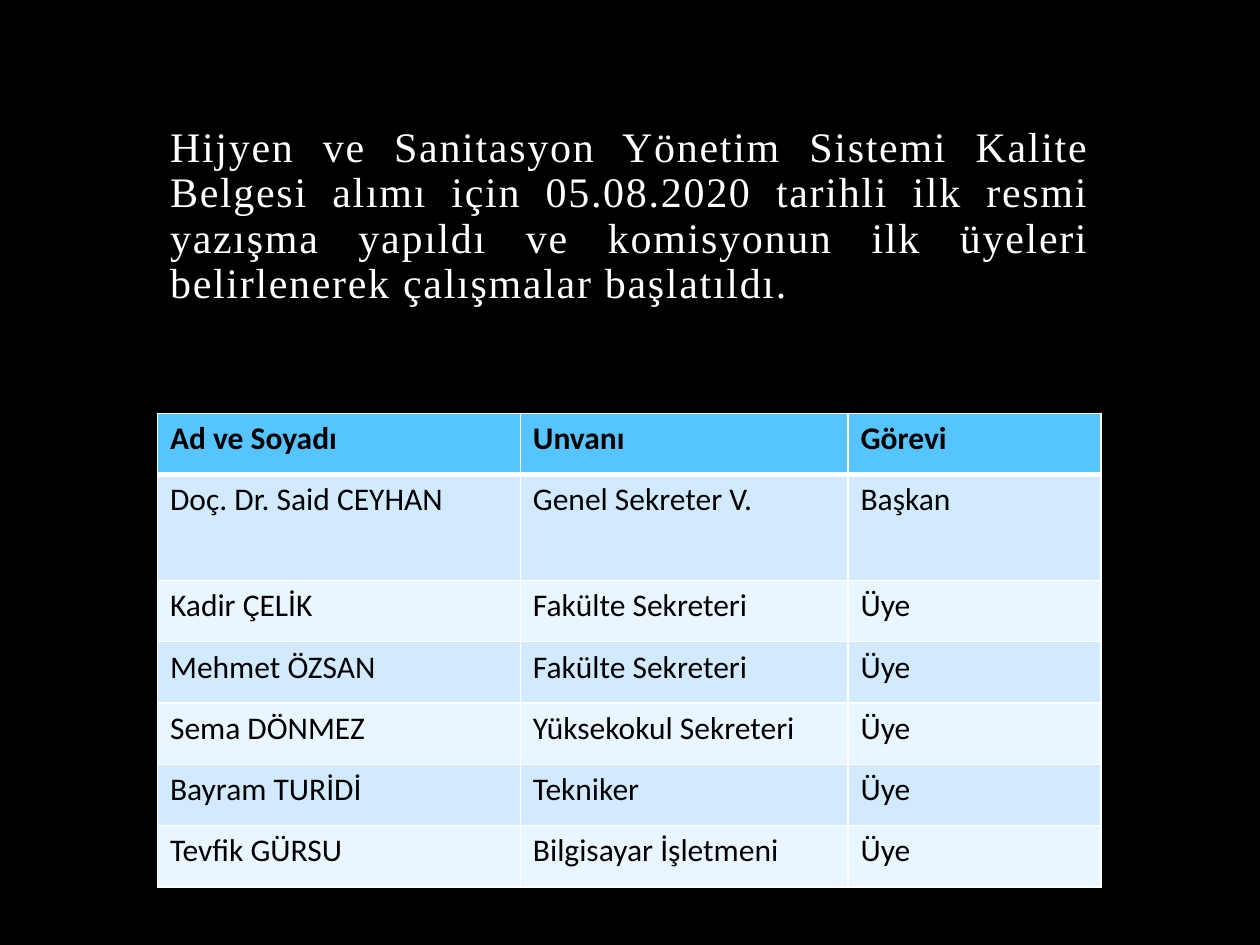
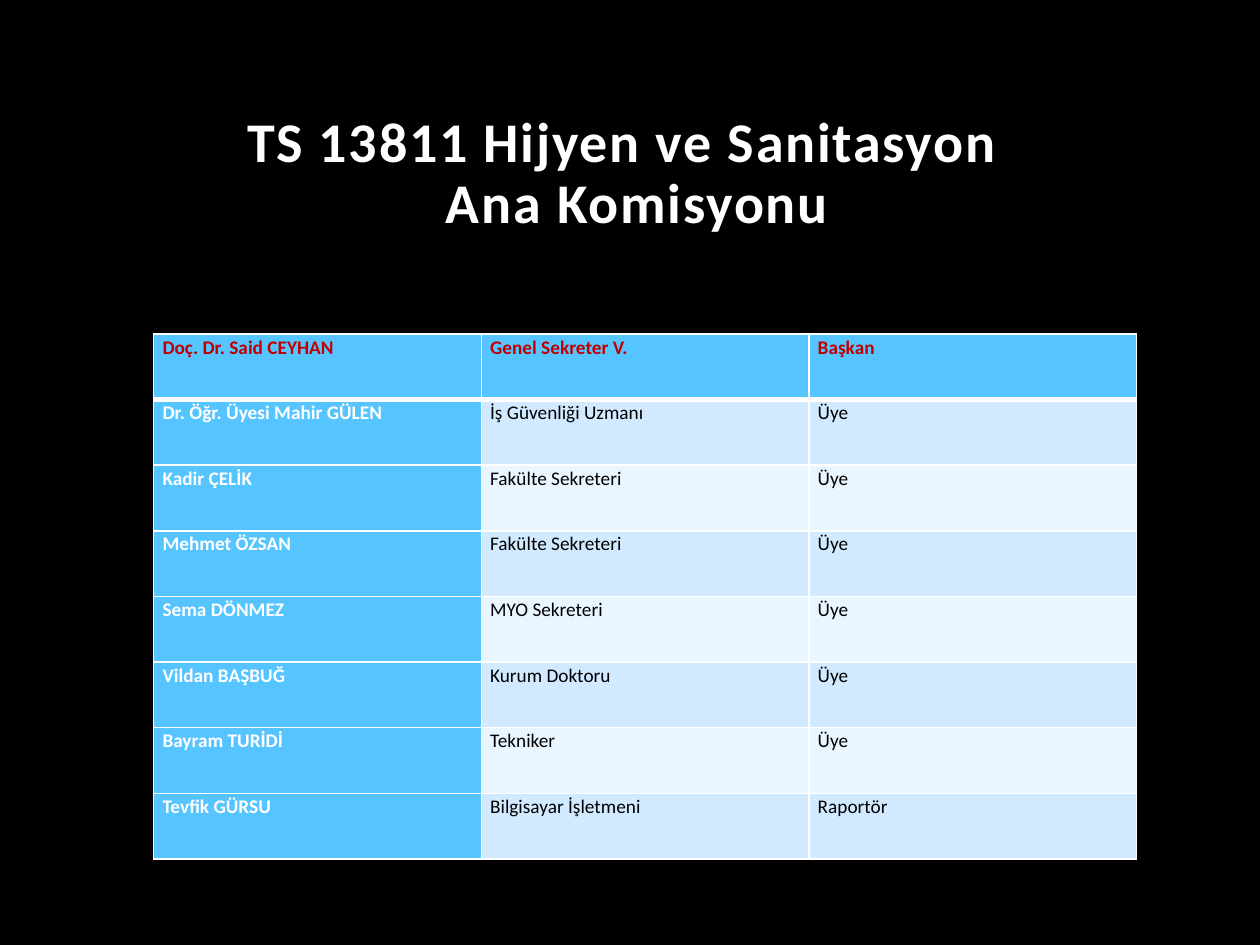
from lxml.etree import SubElement
from pptx import Presentation
from pptx.dml.color import RGBColor
from pptx.enum.text import MSO_ANCHOR, MSO_AUTO_SIZE, PP_ALIGN
from pptx.oxml import parse_xml
from pptx.oxml.ns import nsdecls, qn
from pptx.util import Inches, Pt

BLACK = RGBColor(0x00, 0x00, 0x00)
WHITE = RGBColor(0xFF, 0xFF, 0xFF)
RED = RGBColor(0xC0, 0x00, 0x00)
ACCENT_BLUE = RGBColor(0x56, 0xC5, 0xFF)
BAND_DARK = RGBColor(0xD1, 0xEA, 0xFF)
BAND_LIGHT = RGBColor(0xE9, 0xF5, 0xFF)
BODY_FONT = "Calibri"
LETTER_FONT = "Times New Roman"
TITLE_ONLY = 5

FIRST_TITLE = [
    "Hijyen ve Sanitasyon Yönetim Sistemi Kalite Belgesi alımı için 05.08.2020 "
    "tarihli ilk resmi yazışma yapıldı ve komisyonun ilk üyeleri belirlenerek "
    "çalışmalar başlatıldı."
]
FIRST_MEMBERS = [
    ("Ad ve Soyadı", "Unvanı", "Görevi"),
    ("Doç. Dr. Said CEYHAN", "Genel Sekreter V.", "Başkan"),
    ("Kadir ÇELİK", "Fakülte Sekreteri", "Üye"),
    ("Mehmet ÖZSAN", "Fakülte Sekreteri", "Üye"),
    ("Sema DÖNMEZ", "Yüksekokul Sekreteri", "Üye"),
    ("Bayram TURİDİ", "Tekniker", "Üye"),
    ("Tevfik GÜRSU", "Bilgisayar İşletmeni", "Üye"),
]
MAIN_TITLE = ["TS 13811 Hijyen ve Sanitasyon ", " Ana Komisyonu"]
MAIN_MEMBERS = [
    ("Doç. Dr. Said CEYHAN", "Genel Sekreter V.", "Başkan"),
    ("Dr. Öğr. Üyesi Mahir GÜLEN", "İş Güvenliği Uzmanı", "Üye"),
    ("Kadir ÇELİK", "Fakülte Sekreteri", "Üye"),
    ("Mehmet ÖZSAN", "Fakülte Sekreteri", "Üye"),
    ("Sema DÖNMEZ", "MYO Sekreteri", "Üye"),
    ("Vildan BAŞBUĞ", "Kurum Doktoru", "Üye"),
    ("Bayram TURİDİ", "Tekniker", "Üye"),
    ("Tevfik GÜRSU", "Bilgisayar İşletmeni", "Raportör"),
]


def add_run(paragraph, text, font_name, size, color, bold=False):
    """Append one formatted run and return it."""
    run = paragraph.add_run()
    run.text = text
    run.font.name = font_name
    run.font.size = Pt(size)
    run.font.bold = bold
    run.font.color.rgb = color
    return run


def add_title(slide, box, lines, font_name, size, alignment, bold=False):
    """Fill the title placeholder with letter-spaced lines in the given box."""
    title = slide.shapes.title
    title.left, title.top, title.width, title.height = map(Inches, box)
    frame = title.text_frame
    frame.word_wrap = True
    frame.auto_size = MSO_AUTO_SIZE.NONE
    frame.vertical_anchor = MSO_ANCHOR.BOTTOM
    paragraph = frame.paragraphs[0]
    paragraph.alignment = alignment
    paragraph.line_spacing = 0.9
    for index, line in enumerate(lines):
        if index:
            paragraph.add_line_break()
        run = add_run(paragraph, line, font_name, size, WHITE, bold)
        run.font._element.set("spc", "100")


def set_borders(cell, top, bottom):
    """Draw white borders, with the top and bottom widths in points."""
    properties = cell._tc.get_or_add_tcPr()
    widths = {"lnL": 1, "lnR": 1, "lnT": top, "lnB": bottom}
    for index, (side, width) in enumerate(widths.items()):
        line = parse_xml(f'<a:{side} {nsdecls("a")} w="{Pt(width)}"/>')
        fill = SubElement(line, qn("a:solidFill"))
        SubElement(fill, qn("a:srgbClr"), val=str(WHITE))
        properties.insert(index, line)


def cell_style(row, column, header_color, name_column):
    """Return the fill, text colour and weight of a table cell."""
    if row == 0:
        return ACCENT_BLUE, header_color, True
    if name_column and column == 0:
        return ACCENT_BLUE, WHITE, True
    return (BAND_DARK if row % 2 else BAND_LIGHT), BLACK, False


def add_member_table(slide, box, members, widths, heights, size, header_color,
                     name_column=False, compact=False):
    """Add the banded table of commission members in the given box."""
    frame = slide.shapes.add_table(len(members), len(widths), *map(Inches, box))
    table = frame.table
    for column, width in zip(table.columns, widths):
        column.width = Inches(width)
    for row, height in zip(table.rows, heights):
        row.height = Inches(height)
    for row, member in enumerate(members):
        for column, text in enumerate(member):
            cell = table.cell(row, column)
            fill, color, bold = cell_style(row, column, header_color, name_column)
            cell.fill.solid()
            cell.fill.fore_color.rgb = fill
            set_borders(cell, 3 if row == 1 else 1, 3 if row == 0 else 1)
            paragraph = cell.text_frame.paragraphs[0]
            if compact:
                cell.margin_left = cell.margin_right = Inches(0.07)
                cell.margin_top = cell.margin_bottom = 0
                paragraph.line_spacing = 1.07
            add_run(paragraph, text, BODY_FONT, size, color, bold)


def build_first_commission(slide):
    """Build the slide on the first members of the commission."""
    add_title(slide, (1.25, 0.84, 7.5, 1.65), FIRST_TITLE, LETTER_FONT, 24,
              PP_ALIGN.JUSTIFY)
    height, chair_height = 3.76, 0.84
    heights = [(height - chair_height) / (len(FIRST_MEMBERS) - 1)] * len(FIRST_MEMBERS)
    heights[1] = chair_height
    add_member_table(slide, (1.25, 3.28, 7.49, height), FIRST_MEMBERS,
                     (2.88, 2.6, 2.01), heights, 18, BLACK)


def build_main_commission(slide):
    """Build the slide on the main commission."""
    add_title(slide, (1.25, 0.42, 7.5, 1.5), MAIN_TITLE, BODY_FONT, 32,
              PP_ALIGN.CENTER, bold=True)
    width, height = 7.8, 4.17
    heights = [height / len(MAIN_MEMBERS)] * len(MAIN_MEMBERS)
    add_member_table(slide, (1.22, 2.65, width, height), MAIN_MEMBERS,
                     [width / 3] * 3, heights, 11, RED,
                     name_column=True, compact=True)


def main():
    """Build and save the presentation."""
    presentation = Presentation()
    presentation.slide_width = Inches(10)
    presentation.slide_height = Inches(7.5)
    background = presentation.slide_master.background.fill
    background.solid()
    background.fore_color.rgb = BLACK
    for build in (build_first_commission, build_main_commission):
        build(presentation.slides.add_slide(presentation.slide_layouts[TITLE_ONLY]))
    presentation.save("out.pptx")


if __name__ == "__main__":
    main()
